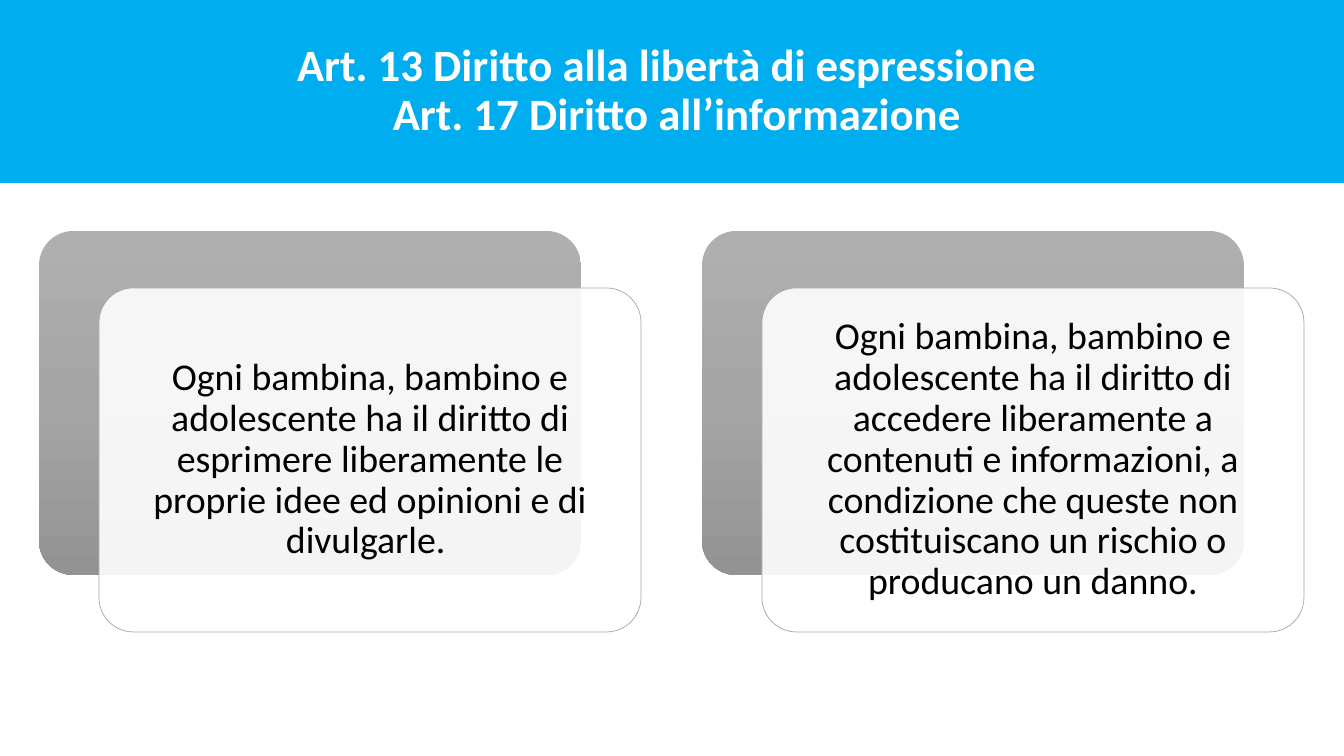
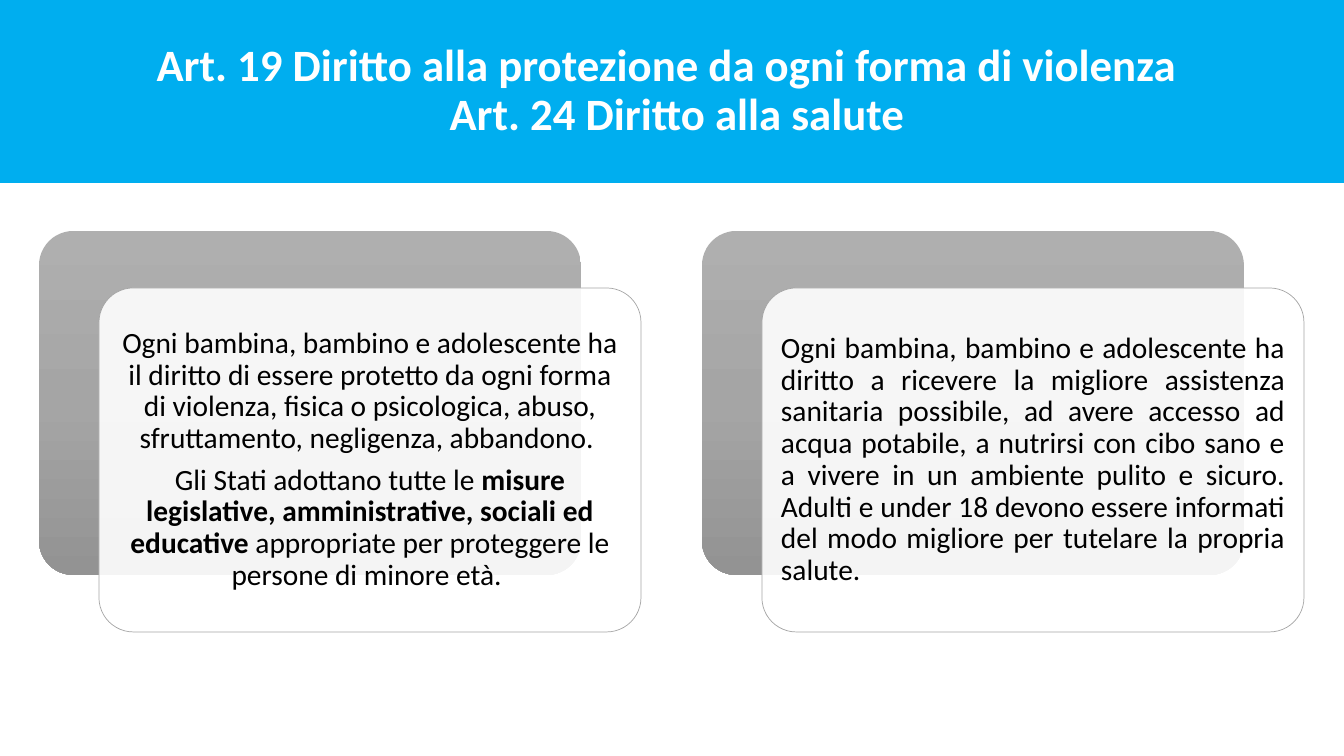
import copy

import pptx
import pptx.dml.color
import pptx.enum.shapes
import pptx.enum.text
import pptx.oxml
import pptx.oxml.ns
import pptx.util

ALIGN = pptx.enum.text.PP_ALIGN
WIDE, HIGH = 1344, 756


def px(num):
    return pptx.util.Emu(round(num * 12192000 / WIDE))


def rgb(code):
    return pptx.dml.color.RGBColor.from_string(code)


class Deck:
    # Shared style
    face = "Calibri"
    band, white, ink, edge = "00AEEF", "FFFFFF", "000000", "A5A5A5"
    fade = [(0, "AFAFAF"), (0.5, "A5A5A5"), (1, "939393")]

    def __init__(self):
        self.prs = pptx.Presentation()
        self.prs.slide_width, self.prs.slide_height = px(WIDE), px(HIGH)
        self.slide = None

    def frame(self, shape, side, top):
        text = shape.text_frame
        text.word_wrap = True
        text.auto_size = pptx.enum.text.MSO_AUTO_SIZE.NONE
        text.vertical_anchor = pptx.enum.text.MSO_ANCHOR.MIDDLE
        text.margin_left = text.margin_right = px(side)
        text.margin_top = text.margin_bottom = px(top)
        return text

    def style(self, para, size, color, bold=False, align=ALIGN.CENTER):
        para.alignment = align
        para.line_spacing = 0.9
        font = para.font
        font.name, font.size, font.bold = self.face, pptx.util.Pt(size), bold
        font.color.rgb = rgb(color)

    def page(self, title):
        """Start a slide with its title band."""
        self.slide = self.prs.slides.add_slide(self.prs.slide_layouts[5])
        head = self.slide.shapes.title
        head.left, head.top, head.width, head.height = px(0), px(0), px(WIDE), px(183)
        head.fill.solid()
        head.fill.fore_color.rgb = rgb(self.band)
        text = self.frame(head, 30, 5)
        text.text = title
        self.style(text.paragraphs[0], 32, self.white, bold=True)

    def box(self, left, top):
        kind = pptx.enum.shapes.MSO_SHAPE.ROUNDED_RECTANGLE
        shape = self.slide.shapes.add_shape(kind, px(left), px(top), px(542), px(344))
        shape.adjustments[0] = 0.1
        shape.shadow.inherit = False
        return shape

    def back(self, left, top):
        """Grey panel with a three-stop gradient."""
        shape = self.box(left, top)
        shape.line.fill.background()
        shape.fill.gradient()
        shape.fill.gradient_angle = 270
        first = shape._element.spPr.find(".//" + pptx.oxml.ns.qn("a:gs"))
        first.addnext(copy.deepcopy(first))
        for stop, (place, color) in zip(shape.fill.gradient_stops, self.fade):
            stop.position = place
            stop.color.rgb = rgb(color)

    def card(self, left, top, paras, size, inset, align):
        """Translucent card; text between asterisks is bold."""
        shape = self.box(left, top)
        shape.fill.solid()
        shape.fill.fore_color.rgb = rgb(self.white)
        fill = shape._element.spPr.find(".//" + pptx.oxml.ns.qn("a:srgbClr"))
        alpha = pptx.oxml.parse_xml(
            f'<a:alpha {pptx.oxml.ns.nsdecls("a")} val="90000"/>')
        fill.append(alpha)
        shape.line.color.rgb = rgb(self.edge)
        shape.line.width = pptx.util.Pt(0.5)
        text = self.frame(shape, inset, inset)
        for num, words in enumerate(paras):
            para = text.add_paragraph() if num else text.paragraphs[0]
            self.style(para, size, self.ink, align=align)
            para.space_after = pptx.util.Pt(round(size * 0.35))
            for part, bit in enumerate(words.split("*")):
                run = para.add_run()
                run.text = bit
                if part % 2:
                    run.font.bold = True

    def pair(self, items, size, inset):
        """Two panels side by side, each with its card."""
        for col, (paras, align) in enumerate(items):
            left, top = 39 + 663 * col, 231
            self.back(left, top)
            self.card(left + 60, top + 57, paras, size, inset, align)


def main():
    deck = Deck()

    # Expression and information
    deck.page("Art. 13 Diritto alla libertà di espressione \v Art. 17 Diritto all’informazione")
    deck.pair([
        (["Ogni bambina, bambino e adolescente ha il diritto di esprimere "
          "liberamente le proprie idee ed opinioni e di divulgarle. "], ALIGN.CENTER),
        (["Ogni bambina, bambino e adolescente ha il diritto di accedere "
          "liberamente a contenuti e informazioni, a condizione che queste non "
          "costituiscano un rischio o producano un danno."], ALIGN.CENTER),
    ], 27, 11)

    # Protection and health
    deck.page("Art. 19 Diritto alla protezione da ogni forma di violenza \v Art. 24 Diritto alla salute")
    deck.pair([
        (["Ogni bambina, bambino e adolescente ha il diritto di essere protetto "
          "da ogni forma di violenza, fisica o psicologica, abuso, sfruttamento, "
          "negligenza, abbandono. ",
          "Gli Stati adottano tutte le *misure legislative, amministrative, "
          "sociali ed educative *appropriate per proteggere le persone di minore "
          "età. "], ALIGN.CENTER),
        (["Ogni bambina, bambino e adolescente ha diritto a ricevere la migliore "
          "assistenza sanitaria possibile, ad avere accesso ad acqua potabile, a "
          "nutrirsi con cibo sano e a vivere in un ambiente pulito e sicuro. "
          "Adulti e under 18 devono essere informati del modo migliore per "
          "tutelare la propria salute."], ALIGN.JUSTIFY),
    ], 21, 9)

    deck.prs.save("out.pptx")


if __name__ == "__main__":
    main()
